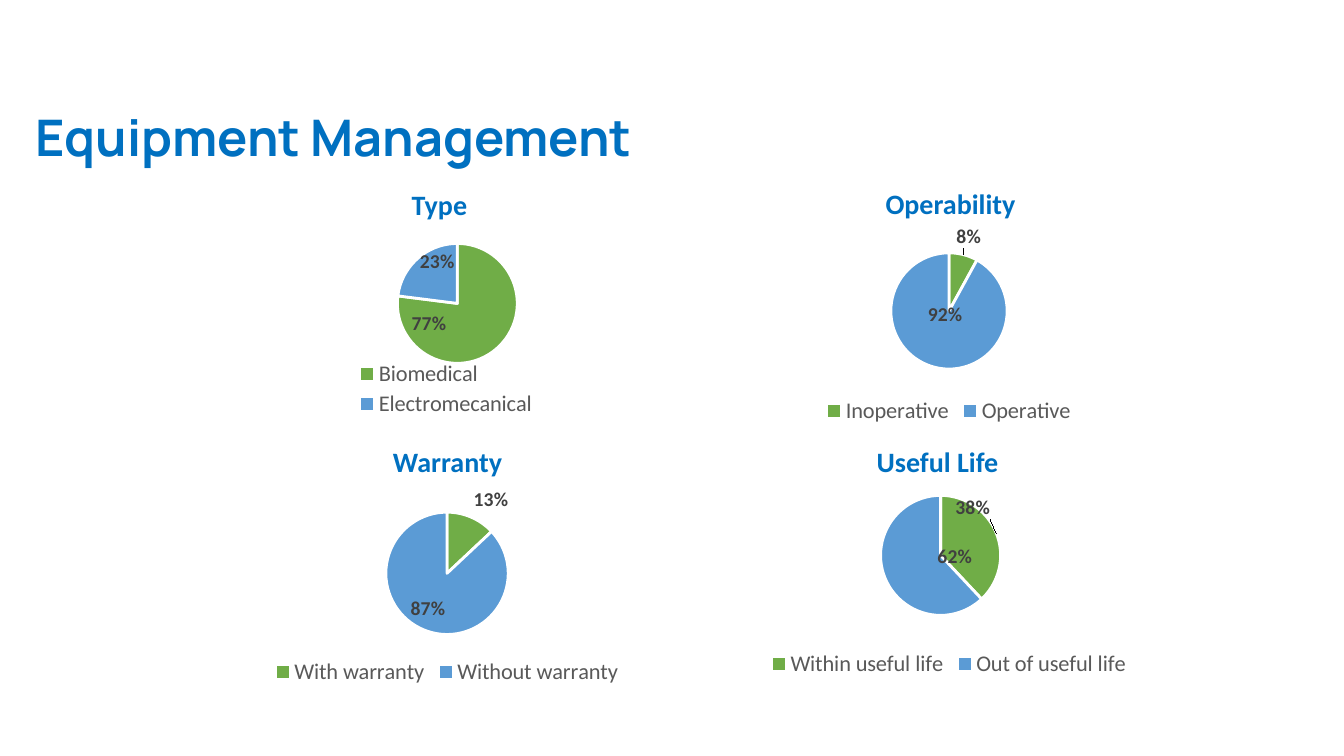
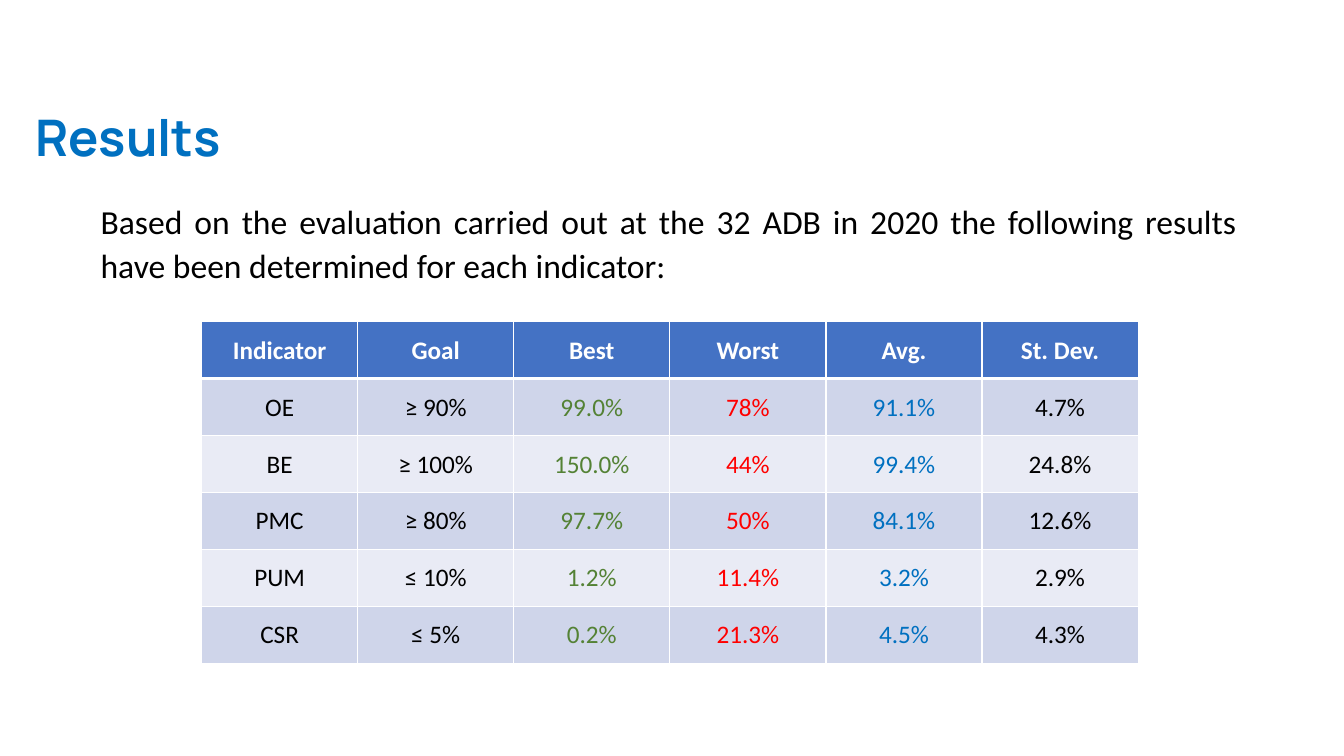
from lxml.etree import SubElement
from pptx import Presentation
from pptx.chart.data import CategoryChartData
from pptx.dml.color import RGBColor
from pptx.enum.chart import XL_CHART_TYPE, XL_LABEL_POSITION, XL_LEGEND_POSITION
from pptx.enum.text import MSO_ANCHOR, MSO_AUTO_SIZE, PP_ALIGN
from pptx.oxml import parse_xml
from pptx.oxml.ns import nsdecls, qn
from pptx.util import Inches, Pt

# Colours and fonts
BLUE = RGBColor(0x00, 0x70, 0xC0)
GREEN = RGBColor(0x54, 0x82, 0x35)
RED = RGBColor(0xFF, 0x00, 0x00)
BLACK = RGBColor(0x00, 0x00, 0x00)
WHITE = RGBColor(0xFF, 0xFF, 0xFF)
DARK = RGBColor(0x40, 0x40, 0x40)
GREY = RGBColor(0x59, 0x59, 0x59)
LEAF = RGBColor(0x70, 0xAD, 0x47)
SKY = RGBColor(0x5B, 0x9B, 0xD5)
HEAD = RGBColor(0x44, 0x72, 0xC4)
BANDS = (RGBColor(0xCF, 0xD5, 0xEA), RGBColor(0xE9, 0xEB, 0xF5))
TITLE, BODY = "Manrope", "Calibri"

# Slide size; boxes are given as percent of it
WIDE, HIGH = Inches(13.33), Inches(7.5)

# Heading, heading box, chart box, slices, plot, label shifts, legend box
PIES = [
    ("Type", (24.15, 24.13, 17.1, 5.87), (19.5, 30.13, 27.68, 26),
     {"Biomedical": 77, "Electromecanical": 23}, (0.08, 0.08, 0.89, 0.61),
     [(-0.24, -0.21), (0.11, 0.1)], (0.25, 0.66, 0.49, 0.32)),
    ("Operability", (65.1, 24, 11.25, 5.87), (54.9, 29.33, 31.43, 27.47),
     {"Inoperative": 8, "Operative": 92}, (0.1, 0.15, 0.8, 0.56),
     [(-0.02, 0), (0.07, -0.34)], None),
    ("Warranty", (26.55, 58.13, 13.5, 5.87), (17.85, 62.93, 30.83, 28.4),
     {"With warranty": 13, "Without warranty": 87}, (0.15, 0.17, 0.7, 0.57),
     [], None),
    ("Useful Life", (61.13, 58.13, 17.25, 5.87), (54.9, 59.73, 31.43, 30.53),
     {"Within useful life": 38, "Out of useful life": 62},
     (0.12, 0.19, 0.72, 0.52), [(-0.11, -0.05), (0.22, -0.15)], None),
]

ROWS = [
    ("Indicator", "Goal", "Best", "Worst", "Avg.", "St. Dev."),
    ("OE", "≥ 90%", "99.0%", "78%", "91.1%", "4.7%"),
    ("BE", "≥ 100%", "150.0%", "44%", "99.4%", "24.8%"),
    ("PMC", "≥ 80%", "97.7%", "50%", "84.1%", "12.6%"),
    ("PUM", "≤ 10%", "1.2%", "11.4%", "3.2%", "2.9%"),
    ("CSR", "≤ 5%", "0.2%", "21.3%", "4.5%", "4.3%"),
]
INKS = (BLACK, BLACK, GREEN, RED, BLUE, BLACK)


def place(x, y, w, h):
    """Turn percent of the slide into lengths."""
    return (int(WIDE * x / 100), int(HIGH * y / 100),
            int(WIDE * w / 100), int(HIGH * h / 100))


def style(font, size, color, bold=False, face=BODY):
    font.size, font.bold, font.name = Pt(size), bold, face
    font.color.rgb = color


def write(frame, text, size, color, bold=False, face=BODY, align=PP_ALIGN.CENTER):
    para = frame.paragraphs[0]
    para.alignment = align
    run = para.add_run()
    run.text = text
    style(run.font, size, color, bold, face)
    return para


def add_text(slide, box, text, size, color, bold=False, align=PP_ALIGN.CENTER):
    frame = slide.shapes.add_textbox(*place(*box)).text_frame
    frame.word_wrap = True
    return write(frame, text, size, color, bold, align=align)


def add_slide(deck, text):
    slide = deck.slides.add_slide(deck.slide_layouts[5])
    title = slide.shapes.title
    title.left, title.top, title.width, title.height = place(1.88, 14.27, 82.95, 10.13)
    frame = title.text_frame
    frame.auto_size = MSO_AUTO_SIZE.NONE
    frame.vertical_anchor = MSO_ANCHOR.TOP
    para = write(frame, text, 36, BLUE, True, TITLE, PP_ALIGN.LEFT)
    para.line_spacing = 0.9
    return slide


def layout(box, inner=False):
    """Make a manual chart layout; two numbers shift, four set a frame."""
    tags = []
    if inner:
        tags.append(("layoutTarget", "inner"))
    if len(box) == 4:
        tags += [("xMode", "edge"), ("yMode", "edge")]
    tags += zip("xywh", box)
    items = "".join(f'<c:{tag} val="{val}"/>' for tag, val in tags)
    return parse_xml(f'<c:layout {nsdecls("c")}><c:manualLayout>{items}'
                     '</c:manualLayout></c:layout>')


def set_plot(chart, box):
    area = chart.element.find(".//" + qn("c:plotArea"))
    for old in area.findall(qn("c:layout")):
        area.remove(old)
    area.insert(0, layout(box, True))


def set_legend(chart, box):
    chart.has_legend = True
    legend = chart.legend
    legend.position = XL_LEGEND_POSITION.BOTTOM
    legend.include_in_layout = False
    style(legend.font, 16, GREY)
    if box:
        root = chart.element.find(".//" + qn("c:legend"))
        for old in root.findall(qn("c:layout")):
            root.remove(old)
        root.find(qn("c:legendPos")).addnext(layout(box))


def set_labels(chart, series, shifts):
    labels = series.data_labels
    labels.show_value, labels.show_percentage = False, True
    labels.number_format, labels.number_format_is_linked = "0%", False
    labels.position = XL_LABEL_POSITION.BEST_FIT
    style(labels.font, 14, DARK, True)
    for i in range(len(shifts)):
        label = series.points[i].data_label
        label.position = XL_LABEL_POSITION.BEST_FIT
        style(label.font, 14, DARK, True)
    # Move single labels away from their usual place
    for node, shift in zip(chart.element.iter(qn("c:dLbl")), shifts):
        node.find(qn("c:showVal")).set("val", "0")
        node.find(qn("c:showPercent")).set("val", "1")
        node.find(qn("c:idx")).addnext(layout(shift))


def add_pie(slide, box, parts, plot, shifts, legend):
    data = CategoryChartData()
    data.categories = list(parts)
    data.add_series("Series 1", list(parts.values()))
    chart = slide.shapes.add_chart(XL_CHART_TYPE.PIE, *place(*box), data).chart
    chart.has_title = False
    style(chart.font, 10, BLACK)
    chart.plots[0].vary_by_categories = True
    series = chart.plots[0].series[0]
    for i, color in enumerate((LEAF, SKY)):
        form = series.points[i].format
        form.fill.solid()
        form.fill.fore_color.rgb = color
        form.line.color.rgb = WHITE
        form.line.width = Pt(2)
    set_plot(chart, plot)
    set_legend(chart, legend)
    set_labels(chart, series, shifts)


def set_edges(cell, base):
    """Draw white cell borders, the lower one with its own width."""
    props = cell._tc.get_or_add_tcPr()
    for i, (tag, size) in enumerate((("lnL", 1), ("lnR", 1), ("lnT", 1), ("lnB", base))):
        line = parse_xml(f'<a:{tag} {nsdecls("a")} w="{Pt(size)}"/>')
        fill = SubElement(line, qn("a:solidFill"))
        SubElement(fill, qn("a:srgbClr"), val=str(WHITE))
        props.insert(i, line)


def add_grid(slide, box, rows):
    area = place(*box)
    grid = slide.shapes.add_table(len(rows), len(rows[0]), *area).table
    for col in grid.columns:
        col.width = area[2] // len(rows[0])
    for r, row in enumerate(rows):
        grid.rows[r].height = area[3] // len(rows)
        for c, text in enumerate(row):
            cell = grid.cell(r, c)
            cell.vertical_anchor = MSO_ANCHOR.MIDDLE
            cell.margin_left = cell.margin_right = cell.margin_top = Inches(0.01)
            cell.margin_bottom = 0
            cell.fill.solid()
            cell.fill.fore_color.rgb = BANDS[(r - 1) % 2] if r else HEAD
            write(cell.text_frame, text, 18, INKS[c] if r else WHITE, r == 0)
            # The rule under the header is shared with the first row
            set_edges(cell, 1 if r else 3)
            if r == 1:
                cell._tc.tcPr.find(qn("a:lnT")).set("w", str(Pt(3)))


def main():
    deck = Presentation()
    deck.slide_width, deck.slide_height = WIDE, HIGH

    # Four pies
    slide = add_slide(deck, "Equipment Management")
    for name, spot, box, parts, plot, shifts, legend in PIES:
        add_pie(slide, box, parts, plot, shifts, legend)
        add_text(slide, spot, name, 20, BLUE, True)

    # Indicator table
    slide = add_slide(deck, "Results")
    para = add_text(
        slide, (6.75, 25.6, 86.03, 14),
        "Based on the evaluation carried out at the 32 ADB in 2020 the following "
        "results have been determined for each indicator:",
        24, BLACK, align=PP_ALIGN.JUSTIFY)
    para.line_spacing = 1.07
    add_grid(slide, (15, 42.53, 69.68, 45.2), ROWS)

    deck.save("out.pptx")


if __name__ == "__main__":
    main()
